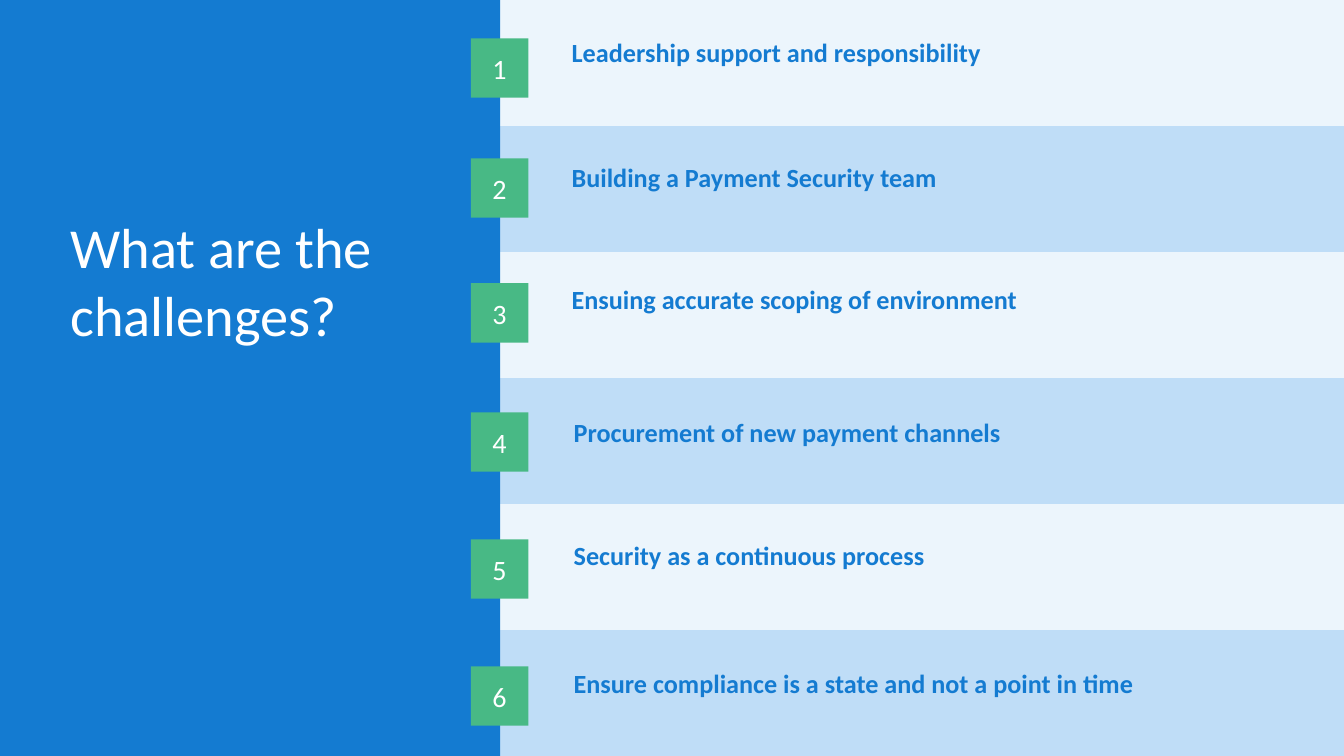
from pptx import Presentation
from pptx.dml.color import RGBColor
from pptx.enum.shapes import MSO_SHAPE as Shape
from pptx.enum.text import MSO_ANCHOR as Anchor, PP_ALIGN as Align
from pptx.util import Inches, Pt

COLORS = {"panel": "147BD1", "light": "ECF5FC", "mid": "BFDDF7",
          "badge": "48B985", "white": "FFFFFF"}
WIDTH, HEIGHT = 13.33, 7.5
PANEL_WIDTH = 4.96
BADGE_LEFT, BADGE_WIDTH, BADGE_HEIGHT = 4.67, 0.57, 0.59
LABEL_HEIGHT = 0.63

# Text, badge top, label left, label top
CHALLENGES = [
    ("Leadership support and responsibility", 0.38, 5.54, 0.18),
    ("Building a Payment Security team", 1.57, 5.54, 1.42),
    ("Ensuing accurate scoping of environment", 2.81, 5.54, 2.63),
    ("Procurement of new payment channels", 4.09, 5.56, 3.95),
    ("Security as a continuous process", 5.35, 5.56, 5.17),
    ("Ensure compliance is a state and not a point in time", 6.61, 5.56, 6.44),
]
ROW_HEIGHT = HEIGHT / len(CHALLENGES)


def rgb(color):
    return RGBColor.from_string(COLORS[color])


def add_block(slide, left, top, width, height, color):
    block = slide.shapes.add_shape(
        Shape.RECTANGLE, *map(Inches, (left, top, width, height)))
    block.shadow.inherit = False
    block.fill.solid()
    block.fill.fore_color.rgb = rgb(color)
    block.line.fill.background()
    return block


def write(holder, text, size, color, inset=(0.13, 0.13), anchor=Anchor.TOP,
          bold=False, **paragraph_format):
    """Put one formatted paragraph in a shape; inset is (sides, top and bottom)."""
    frame = holder.text_frame
    sides, ends = map(Inches, inset)
    frame_format = {"word_wrap": True, "vertical_anchor": anchor,
                    "margin_left": sides, "margin_right": sides,
                    "margin_top": ends, "margin_bottom": ends}
    paragraph = frame.paragraphs[0]
    run = paragraph.add_run()
    run.text = text
    run.font.color.rgb = rgb(color)
    font_format = {"name": "Calibri", "size": Pt(size), "bold": bold}
    for target, values in ((frame, frame_format), (run.font, font_format),
                           (paragraph, paragraph_format)):
        for name, value in values.items():
            setattr(target, name, value)


def add_text(slide, left, top, width, height, text, size, color, **options):
    box = slide.shapes.add_textbox(*map(Inches, (left, top, width, height)))
    write(box, text, size, color, **options)


def add_bands(slide):
    for row in range(len(CHALLENGES)):
        add_block(slide, PANEL_WIDTH, row * ROW_HEIGHT, WIDTH - PANEL_WIDTH,
                  ROW_HEIGHT, "mid" if row % 2 else "light")


def add_challenge(slide, number, text, badge_top, label_left, label_top):
    badge = add_block(slide, BADGE_LEFT, badge_top, BADGE_WIDTH, BADGE_HEIGHT, "badge")
    write(badge, str(number), 20, "white", anchor=Anchor.MIDDLE,
          alignment=Align.CENTER)
    add_text(slide, label_left, label_top, WIDTH - label_left, LABEL_HEIGHT,
             text, 18.7, "panel", bold=True, line_spacing=1.15)


def main():
    deck = Presentation()
    deck.slide_width, deck.slide_height = Inches(WIDTH), Inches(HEIGHT)
    slide = deck.slides.add_slide(deck.slide_layouts[6])
    add_bands(slide)
    add_block(slide, 0, 0, PANEL_WIDTH, HEIGHT, "panel")
    add_text(slide, 0.6, 1.42, 4.04, 2.71, "What are the challenges?", 40.3,
             "white", inset=(0.1, 0.05), anchor=Anchor.MIDDLE)
    for number, challenge in enumerate(CHALLENGES, start=1):
        add_challenge(slide, number, *challenge)
    deck.save("out.pptx")


if __name__ == "__main__":
    main()
